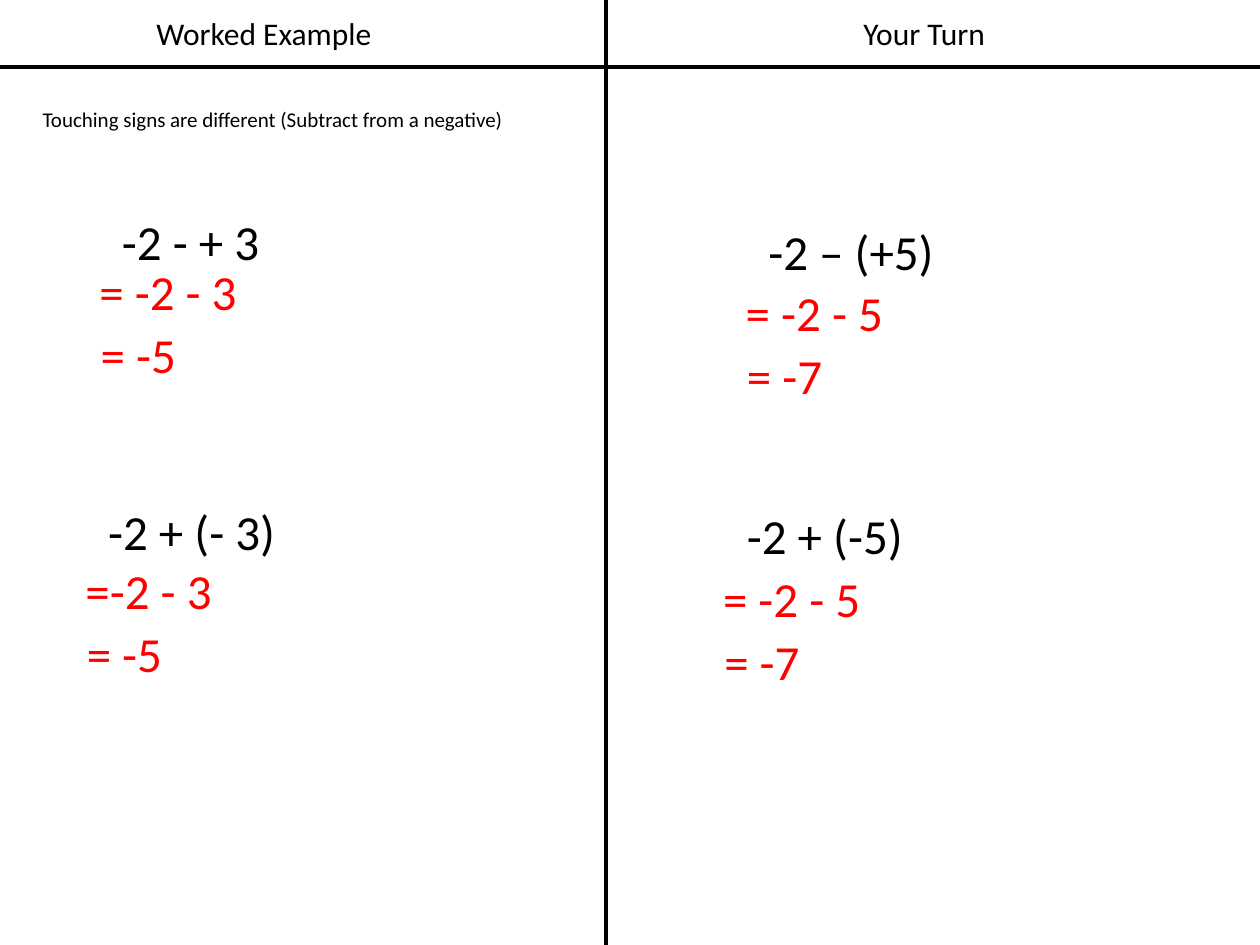
from dataclasses import dataclass

from pptx import Presentation
from pptx.dml.color import RGBColor
from pptx.enum.shapes import MSO_CONNECTOR
from pptx.enum.text import MSO_AUTO_SIZE, PP_ALIGN
from pptx.oxml.ns import qn
from pptx.slide import Slide
from pptx.text.text import _Paragraph as Paragraph
from pptx.util import Inches, Pt
from lxml.etree import SubElement

FONT = "Calibri"
BLACK = "000000"
RED = "FF0000"
WIDTH, HEIGHT = 10, 7.5
STEP_WIDTH, LINE_HEIGHT, STEP_GAP, STEP_INDENT = 1.52, 0.57, 0.5, 0.01


@dataclass
class Problem:
    question: str
    left: float
    top: float
    width: float
    steps: tuple[str, ...]
    steps_left: float
    steps_top: float
    height: float = LINE_HEIGHT
    line_spacing: float = 1.0
    space_before: float = 0


HEADINGS = {"Worked Example": 1.13, "Your Turn": 6.37}
PROBLEMS = [
    Problem("-2 - + 3", 0.87, 1.68, 1.4, ("= -2 - 3", "= -5"), 0.69, 2.03,
            height=0.53, line_spacing=0.9, space_before=10),
    Problem("-2 + (- 3)", 0.76, 3.93, 1.55, ("=-2 - 3", "= -5"), 0.58, 4.4),
    Problem("-2 – (+5)", 6, 1.71, 1.53, ("= -2 - 5", "= -7"), 5.82, 2.19),
    Problem("-2 + (-5)", 5.83, 3.96, 1.46, ("= -2 - 5", "= -7"), 5.64, 4.46),
]


def color(hex_value: str) -> RGBColor:
    return RGBColor.from_string(hex_value)


def add_text(slide: Slide, text: str, left: float, top: float, width: float,
             height: float, size: float, hex_value: str = BLACK,
             wrap: bool = True) -> Paragraph:
    shape = slide.shapes.add_textbox(Inches(left), Inches(top),
                                     Inches(width), Inches(height))
    frame = shape.text_frame
    frame.word_wrap = wrap
    frame.auto_size = MSO_AUTO_SIZE.SHAPE_TO_FIT_TEXT
    paragraph = frame.paragraphs[0]
    run = paragraph.add_run()
    run.text = text
    run.font.name = FONT
    run.font.size = Pt(size)
    run.font.color.rgb = color(hex_value)
    return paragraph


def add_divider(slide: Slide, x1: float, y1: float, x2: float, y2: float) -> None:
    line = slide.shapes.add_connector(MSO_CONNECTOR.STRAIGHT, Inches(x1),
                                      Inches(y1), Inches(x2), Inches(y2))
    line.line.color.rgb = color(BLACK)
    line.line.width = Pt(2.5)
    SubElement(line._element.spPr, qn("a:effectLst"))


def add_problem(slide: Slide, problem: Problem) -> None:
    paragraph = add_text(slide, problem.question, problem.left, problem.top,
                         problem.width, problem.height, 28, wrap=False)
    paragraph.line_spacing = problem.line_spacing
    paragraph.space_before = Pt(problem.space_before)
    for index, step in enumerate(problem.steps):
        add_text(slide, step, problem.steps_left + index * STEP_INDENT,
                 problem.steps_top + index * STEP_GAP,
                 STEP_WIDTH, LINE_HEIGHT, 28, RED)


def main() -> None:
    presentation = Presentation()
    presentation.slide_width = Inches(WIDTH)
    presentation.slide_height = Inches(HEIGHT)
    slide = presentation.slides.add_slide(presentation.slide_layouts[6])

    # Column headings
    for heading, left in HEADINGS.items():
        paragraph = add_text(slide, heading, left, 0.06, 1.93, 0.4, 18)
        paragraph.alignment = PP_ALIGN.CENTER

    # Dividers between columns and below the headings
    add_divider(slide, 4.81, 0, 4.81, HEIGHT)
    add_divider(slide, 0, 0.53, WIDTH, 0.53)

    # Rule and problems with their worked steps
    add_text(slide, "Touching signs are different (Subtract from a negative)",
             0.24, 0.8, 3.95, 0.3, 12, wrap=False)
    for problem in PROBLEMS:
        add_problem(slide, problem)

    presentation.save("out.pptx")


if __name__ == "__main__":
    main()
